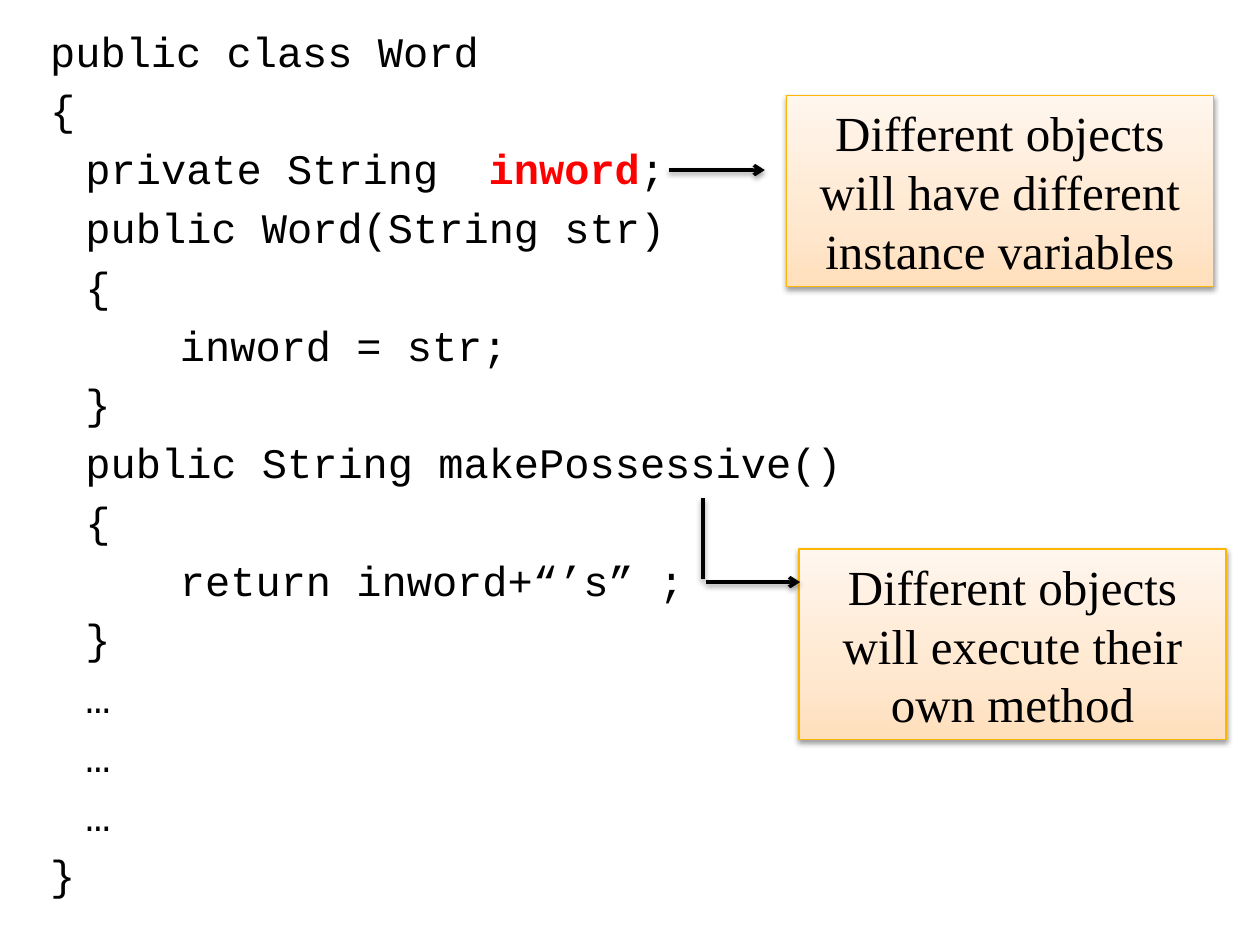
from pptx import Presentation
from pptx.dml.color import RGBColor
from pptx.enum.shapes import MSO_CONNECTOR, MSO_SHAPE
from pptx.enum.text import MSO_ANCHOR, PP_ALIGN
from pptx.oxml import parse_xml
from pptx.oxml.ns import nsdecls
from pptx.util import Inches, Pt

STRAIGHT = MSO_CONNECTOR.STRAIGHT
RECTANGLE = MSO_SHAPE.RECTANGLE
TOP, MIDDLE = MSO_ANCHOR.TOP, MSO_ANCHOR.MIDDLE
LEFT, CENTER = PP_ALIGN.LEFT, PP_ALIGN.CENTER

WIDTH, HEIGHT = 10, 7.5
COLORS = {"text": "000000", "highlight": "FF0000", "border": "FEB604", "shadow": "000000"}
GRADIENT = {0: "FFDFBC", 35: "FFE8D0", 100: "FFF6ED"}
CODE_FONT, NOTE_FONT = "Courier New", "Times New Roman"
CODE_SIZE, NOTE_SIZE = 24, 28
LEVEL_INDENTS = (0, 0.28, 1.03)
HIGHLIGHTED = "inword"

CODE = [
    (0, ["public class Word"]),
    (0, ["{"]),
    (1, ["private String  ", HIGHLIGHTED, ";"]),
    (1, ["public Word(String str)"]),
    (1, ["{"]),
    (2, ["inword = str;"]),
    (1, ["}"]),
    (1, ["public String makePossessive()"]),
    (1, ["{"]),
    (2, ["return inword+“’s” ;"]),
    (1, ["}"]),
    (1, ["…"]),
    (1, ["…"]),
    (1, ["…"]),
    (0, ["}"]),
]
CODE_BOX = (0.03, 0.02, 0.71, 0.81)
NOTES = [
    ((0.624, 0.101, 0.339, 0.202), "Different objects will have different instance variables"),
    ((0.634, 0.581, 0.339, 0.202), "Different objects will execute their own method"),
]
LINES = [
    ((0.531, 0.18), (0.607, 0.18), True),
    ((0.56, 0.616), (0.635, 0.616), True),
    ((0.558, 0.527), (0.558, 0.613), False),
]


def place(shares):
    """Turn alternating shares of the slide's width and height into lengths."""
    return [Inches(share * side) for share, side in zip(shares, (WIDTH, HEIGHT) * 2)]


def add_run(paragraph, text, font, size, color="text", bold=False):
    """Add one formatted run to a paragraph."""
    run = paragraph.add_run()
    run.text = text
    run.font.name = font
    run.font.size = Pt(size)
    run.font.bold = bold
    run.font.color.rgb = RGBColor.from_string(COLORS[color])


def add_shadow(shape):
    """Give a shape or connector a soft shadow falling straight down."""
    shape._element.spPr.append(parse_xml(
        f'<a:effectLst {nsdecls("a")}>'
        f'<a:outerShdw blurRad="{Pt(3.1)}" dist="{Pt(1.6)}" dir="5400000" rotWithShape="0">'
        f'<a:srgbClr val="{COLORS["shadow"]}"><a:alpha val="38000"/></a:srgbClr>'
        '</a:outerShdw></a:effectLst>'))


def fill_gradient(shape):
    """Fill a shape with the gradient, running from bottom to top."""
    shape.fill.gradient()
    shape.fill.gradient_angle = 90
    stops = shape._element.spPr.find(".//{*}gsLst")
    for stop in list(stops):
        stops.remove(stop)
    for position, color in GRADIENT.items():
        stops.append(parse_xml(
            f'<a:gs {nsdecls("a")} pos="{position * 1000}"><a:srgbClr val="{color}"/></a:gs>'))


def add_code(slide, box):
    """Write the class listing, indenting each line by its level."""
    frame = slide.shapes.add_textbox(*place(box)).text_frame
    frame.word_wrap = True
    frame.vertical_anchor = TOP
    for index, (level, parts) in enumerate(CODE):
        paragraph = frame.add_paragraph() if index else frame.paragraphs[0]
        paragraph.alignment = LEFT
        paragraph.space_before = Pt(CODE_SIZE * 0.2)
        paragraph._p.get_or_add_pPr().set("marL", str(Inches(LEVEL_INDENTS[level])))
        for part in parts:
            marked = part == HIGHLIGHTED
            add_run(paragraph, part, CODE_FONT, CODE_SIZE, "highlight" if marked else "text", marked)


def add_note(slide, box, text):
    """Draw one explanatory note in a shaded box."""
    shape = slide.shapes.add_shape(RECTANGLE, *place(box))
    fill_gradient(shape)
    shape.line.color.rgb = RGBColor.from_string(COLORS["border"])
    shape.line.width = Pt(0.75)
    add_shadow(shape)
    frame = shape.text_frame
    frame.word_wrap = True
    frame.vertical_anchor = MIDDLE
    paragraph = frame.paragraphs[0]
    paragraph.alignment = CENTER
    add_run(paragraph, text, NOTE_FONT, NOTE_SIZE)


def add_line(slide, start, end, has_arrow):
    """Draw a line between two points, with an optional arrowhead at its end."""
    connector = slide.shapes.add_connector(STRAIGHT, *place(start + end))
    connector.line.color.rgb = RGBColor.from_string(COLORS["text"])
    connector.line.width = Pt(2)
    if has_arrow:
        connector.line._get_or_add_ln().append(
            parse_xml(f'<a:tailEnd {nsdecls("a")} type="arrow"/>'))
    add_shadow(connector)


def main():
    """Build and save the slide."""
    presentation = Presentation()
    presentation.slide_width, presentation.slide_height = Inches(WIDTH), Inches(HEIGHT)
    slide = presentation.slides.add_slide(presentation.slide_layouts[6])
    add_code(slide, CODE_BOX)
    for box, text in NOTES:
        add_note(slide, box, text)
    for start, end, has_arrow in LINES:
        add_line(slide, start, end, has_arrow)
    presentation.save("out.pptx")


if __name__ == "__main__":
    main()
